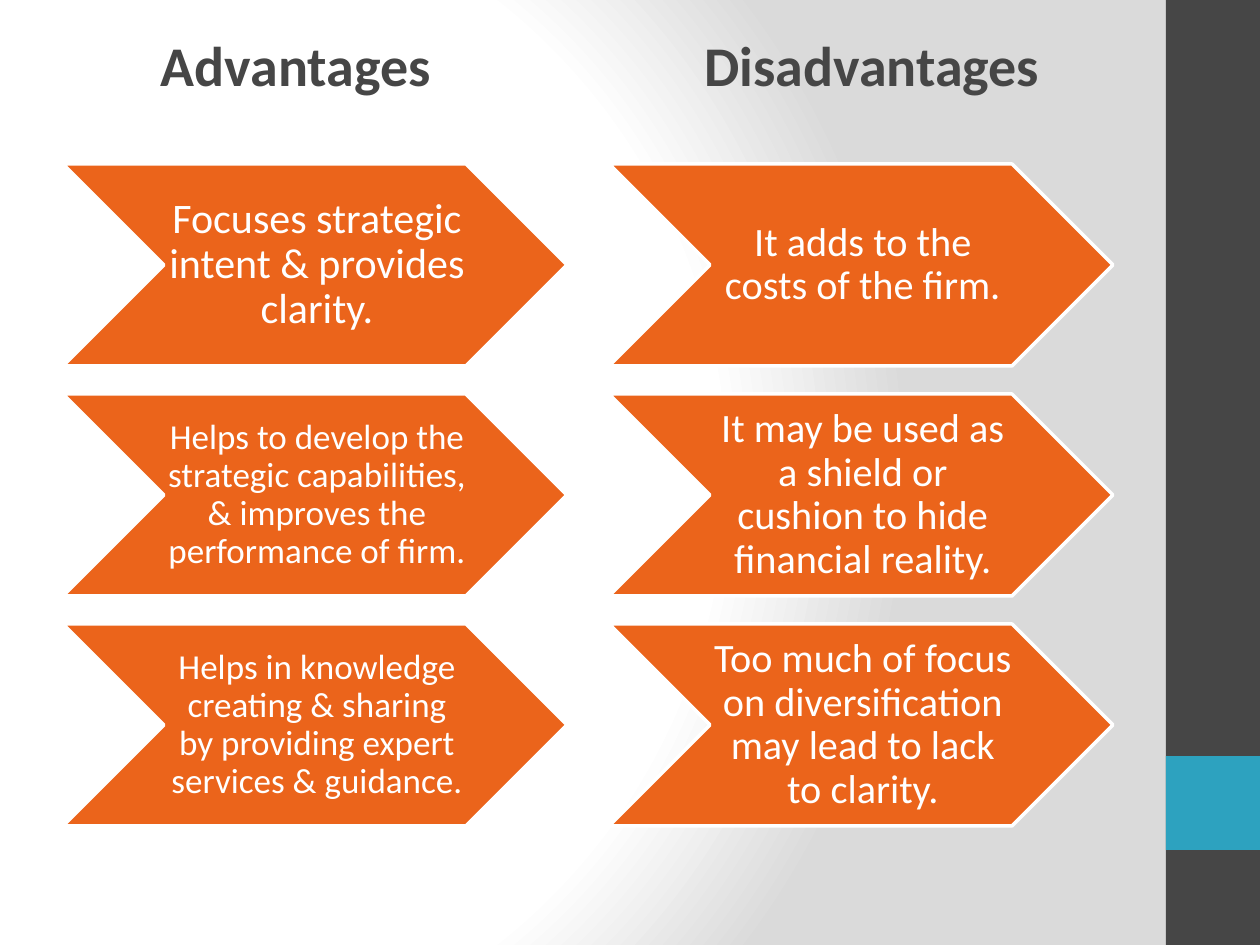
from pptx import Presentation
from pptx.dml.color import RGBColor
from pptx.enum.shapes import MSO_SHAPE
from pptx.enum.text import MSO_ANCHOR, PP_ALIGN
from pptx.oxml import parse_xml
from pptx.oxml.ns import nsdecls
from pptx.util import Emu, Pt

RECT, ARROW = MSO_SHAPE.RECTANGLE, MSO_SHAPE.CHEVRON
MIDDLE, BOTTOM = MSO_ANCHOR.MIDDLE, MSO_ANCHOR.BOTTOM
CENTER = PP_ALIGN.CENTER
WHITE = RGBColor(0xFF, 0xFF, 0xFF)
DARK = RGBColor(0x46, 0x46, 0x46)
TEAL = RGBColor(0x2D, 0xA2, 0xBF)
ORANGE = RGBColor(0xEB, 0x64, 0x1B)
SCALE = 914400 / 126


def add_block(kind, box, color):
    shape = slide.shapes.add_shape(kind, *[Emu(round(n * SCALE)) for n in box])
    shape.shadow.inherit = False
    shape.fill.solid()
    shape.fill.fore_color.rgb = color
    shape.line.fill.background()
    return shape


def add_label(text, box, size, color, anchor, pad):
    label = slide.shapes.add_textbox(*[Emu(round(n * SCALE)) for n in box])
    frame = label.text_frame
    frame.word_wrap = True
    frame.vertical_anchor = anchor
    sides = [Emu(round(n * SCALE)) for n in pad]
    frame.margin_left, frame.margin_top, frame.margin_right, frame.margin_bottom = sides
    para = frame.paragraphs[0]
    para.alignment = CENTER
    run = para.add_run()
    run.text = text
    run.font.name = "Calibri"
    run.font.size = Pt(size)
    run.font.color.rgb = color
    return para


deck = Presentation()
deck.slide_width = Emu(round(1260 * SCALE))
deck.slide_height = Emu(round(945 * SCALE))
slide = deck.slides.add_slide(deck.slide_layouts[6])

stops = "".join(
    f'<a:gs pos="{pos}000"><a:srgbClr val="{tone}"/></a:gs>'
    for pos, tone in [(0, "FFFFFF"), (75, "FFFFFF"), (100, "DADADA")]
)
back = parse_xml(
    f'<p:bg {nsdecls("p", "a")}><p:bgPr><a:gradFill rotWithShape="1">'
    f'<a:gsLst>{stops}</a:gsLst><a:path path="circle">'
    '<a:fillToRect l="20000" t="50000" r="100000" b="50000"/></a:path>'
    '</a:gradFill><a:effectLst/></p:bgPr></p:bg>'
)
slide.element.cSld.insert(0, back)

add_block(RECT, (1166, 0, 94, 945), DARK)
add_block(RECT, (1166, 756, 94, 94), TEAL)

columns = [
    ("Advantages", 44, 63, [
        ("Focuses strategic intent & provides clarity.", 24),
        ("Helps to develop the strategic capabilities, & improves the performance of firm.", 20),
        ("Helps in knowledge creating & sharing by providing expert services & guidance.", 20),
    ]),
    ("Disadvantages", 620, 609, [
        ("It adds to the costs of the firm.", 23),
        ("It may be used as a shield or cushion to hide financial reality.", 23),
        ("Too much of focus on diversification may lead to lack to clarity.", 23),
    ]),
]
for title, head, left, points in columns:
    para = add_label(title, (head, 16, 504, 88), 32, DARK, BOTTOM, (13, 6, 13, 6))
    para.runs[0].font.bold = True
    for row, (text, size) in enumerate(points):
        top = 164 + 230 * row
        arrow = add_block(ARROW, (left, top, 504, 202), ORANGE)
        arrow.line.color.rgb = WHITE
        arrow.line.width = Pt(2)
        box = (left + 101, top, 302, 202)
        para = add_label(text, box, size, WHITE, MIDDLE, (4, 2, 0, 2))
        para.line_spacing = 0.9

deck.save("out.pptx")
